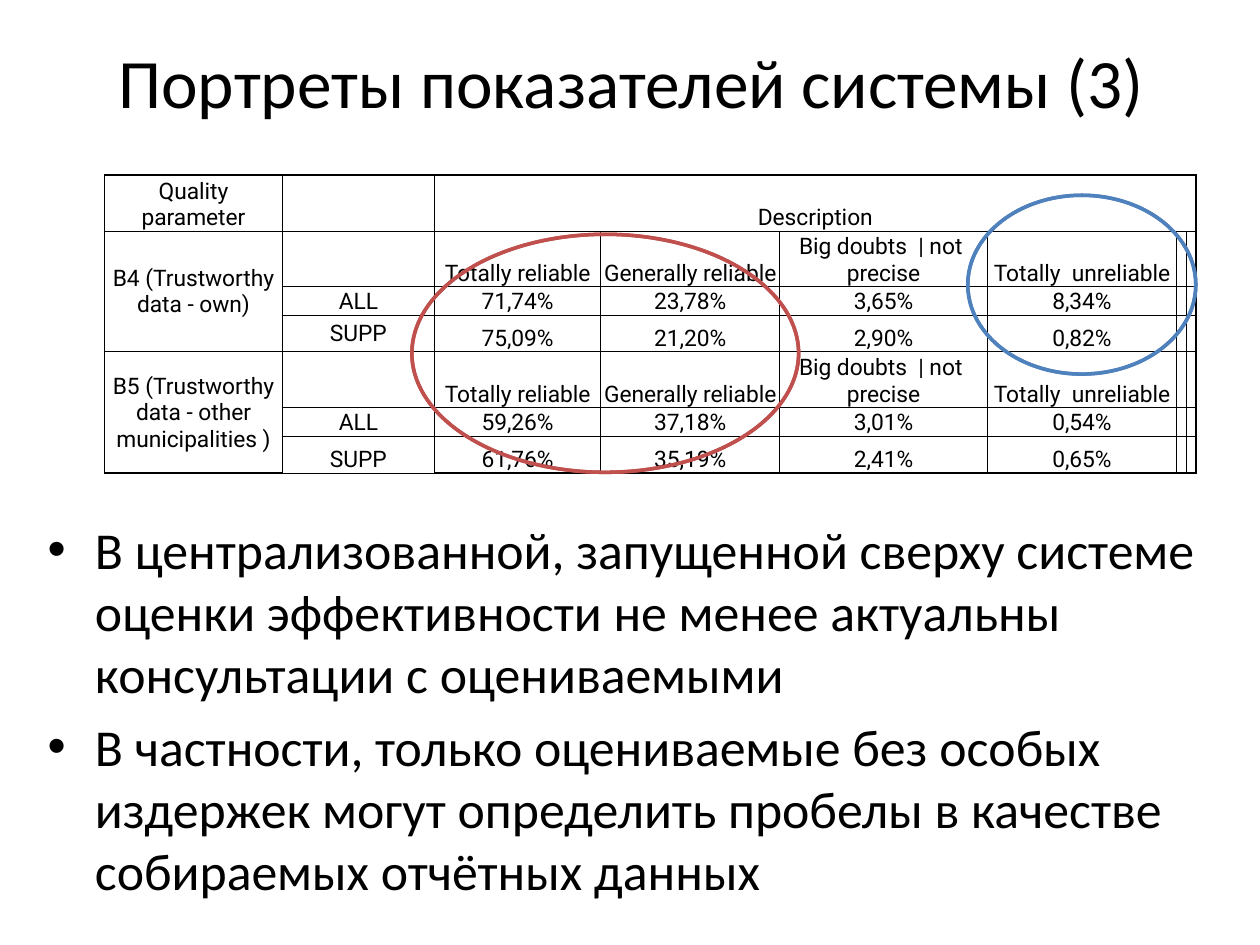
import pptx
import pptx.util
import pptx.dml.color
import pptx.enum.shapes
import pptx.enum.text
import pptx.oxml
from dataclasses import dataclass
from pptx.util import Pt

RGB = pptx.dml.color.RGBColor.from_string
SHAPE = pptx.enum.shapes.MSO_SHAPE
ANCHOR = pptx.enum.text.MSO_ANCHOR
ALIGN = pptx.enum.text.PP_ALIGN
NS = 'xmlns:a="http://schemas.openxmlformats.org/drawingml/2006/main"'


@dataclass(frozen=True)
class Theme:
    ink: str = "000000"
    blue: str = "4F81BD"
    red: str = "C0504D"
    font: str = "Calibri"
    table_font: str = "Roboto"
    title_size: float = 39.6
    body_size: float = 29.6
    table_size: float = 13
    thin: float = 0.5
    thick: float = 1


T = Theme()

COLUMNS = [101.5, 87, 95, 102.2, 118.8, 108, 5.6, 5.6]
ROWS = [30.4, 30.4, 15.8, 20.7, 30.8, 15.8, 21.2]
ANSWERS = ["Totally reliable", "Generally reliable",
           "Big doubts  | not  precise", "Totally  unreliable"]
PARAMETERS = [
    ("В4 (Trustworthy data - own)",
     ["71,74%", "23,78%", "3,65%", "8,34%"],
     ["75,09%", "21,20%", "2,90%", "0,82%"]),
    ("В5 (Trustworthy data - other municipalities )",
     ["59,26%", "37,18%", "3,01%", "0,54%"],
     ["61,76%", "35,19%", "2,41%", "0,65%"]),
]
BULLETS = [
    "В централизованной, запущенной сверху системе оценки эффективности "
    "не менее актуальны консультации с оцениваемыми",
    "В частности, только оцениваемые без особых издержек могут определить "
    "пробелы в качестве собираемых отчётных данных",
]


def style(p, size, font):
    p.font.size, p.font.name = Pt(size), font
    p.font.color.rgb = RGB(T.ink)


def add_text(s, box, lines, size):
    tf = s.shapes.add_textbox(*map(Pt, box)).text_frame
    tf.word_wrap = True
    tf.text = "\n".join(lines)
    for p in tf.paragraphs:
        style(p, size, T.font)
    return tf


def add_title(s, box, text):
    tf = add_text(s, box, [text], T.title_size)
    tf.vertical_anchor = ANCHOR.MIDDLE
    tf.paragraphs[0].alignment = ALIGN.CENTER


def add_bullets(s, box, lines):
    for p in add_text(s, box, lines, T.body_size).paragraphs:
        p.space_before = Pt(6)
        pPr = p._p.get_or_add_pPr()
        pPr.set("marL", str(Pt(27)))
        pPr.set("indent", str(-Pt(27)))
        bullet = (f'<a:buFont {NS} typeface="Arial"/>', f'<a:buChar {NS} char="•"/>')
        for i, xml in enumerate(bullet, 1):  # after the spacing, before the font
            pPr.insert(i, pptx.oxml.parse_xml(xml))


def set_borders(cell, left, right, top, bottom):
    tcPr = cell._tc.get_or_add_tcPr()
    for i, (side, width) in enumerate(zip("LRTB", (left, right, top, bottom))):
        tcPr.insert(i, pptx.oxml.parse_xml(
            f'<a:ln{side} {NS} w="{Pt(width)}"><a:solidFill>'
            f'<a:srgbClr val="{T.ink}"/></a:solidFill></a:ln{side}>'))


def table_texts():
    """Cell texts by (row, column)."""
    texts = {(0, 0): "Quality parameter", (0, 2): "Description"}
    for i, (name, everyone, support) in enumerate(PARAMETERS):
        top = 1 + 3 * i
        texts[top, 0] = name
        texts[top + 1, 1], texts[top + 2, 1] = "ALL", "SUPP"
        for r, line in enumerate((ANSWERS, everyone, support), top):
            texts.update({(r, c): text for c, text in enumerate(line, 2)})
    return texts


def add_quality_table(s, box):
    rows, cols = len(ROWS), len(COLUMNS)
    table = s.shapes.add_table(rows, cols, *map(Pt, box)).table
    table.first_row = table.horz_banding = False
    for column, width in zip(table.columns, COLUMNS):
        column.width = Pt(width)
    for row, height in zip(table.rows, ROWS):
        row.height = Pt(height)

    texts = table_texts()
    for r in range(rows):
        for c in range(cols):
            cell = table.cell(r, c)
            cell.text = texts.get((r, c), "")
            cell.margin_left = cell.margin_right = cell.margin_top = Pt(0.7)
            cell.margin_bottom = 0
            middle = c < 2 and 0 < r < rows - 1 or c == 0 and r > 0
            cell.vertical_anchor = ANCHOR.MIDDLE if middle else ANCHOR.BOTTOM
            p = cell.text_frame.paragraphs[0]
            p.alignment = ALIGN.CENTER
            style(p, T.table_size, T.table_font)
            cell.fill.background()
            outer = (c == 0, c == cols - 1 or (r, c) == (0, 2),
                     r == 0, r == rows - 1 and c != 1 or (r, c) == (4, 0))
            set_borders(cell, *(T.thick if edge else T.thin for edge in outer))

    # Header across the answers, names down each parameter's rows
    table.cell(0, 2).merge(table.cell(0, cols - 1))
    for top in (1, 4):
        table.cell(top, 0).merge(table.cell(top + 2, 0))


def add_ring(s, box, color):
    sp = s.shapes.add_shape(SHAPE.DONUT, *map(Pt, box))
    sp.adjustments[0] = 0
    sp.shadow.inherit = False
    sp.fill.solid()
    sp.fill.fore_color.rgb = RGB("FFFFFF")
    sp.line.color.rgb = RGB(color)
    sp.line.width = Pt(2)


def main():
    prs = pptx.Presentation()
    prs.slide_width, prs.slide_height = Pt(720), Pt(540)
    s = prs.slides.add_slide(prs.slide_layouts[6])
    add_title(s, (36.7, 9.4, 648, 73.4), "Портреты показателей системы (3)")
    add_quality_table(s, (59.8, 100, sum(COLUMNS), sum(ROWS)))
    add_bullets(s, (20.2, 292.3, 674.6, 221), BULLETS)
    # Rings around the notable answers
    add_ring(s, (553, 111.6, 130.3, 102.2), T.blue)
    add_ring(s, (235.4, 133.9, 221, 136), T.red)
    prs.save("out.pptx")


if __name__ == "__main__":
    main()
